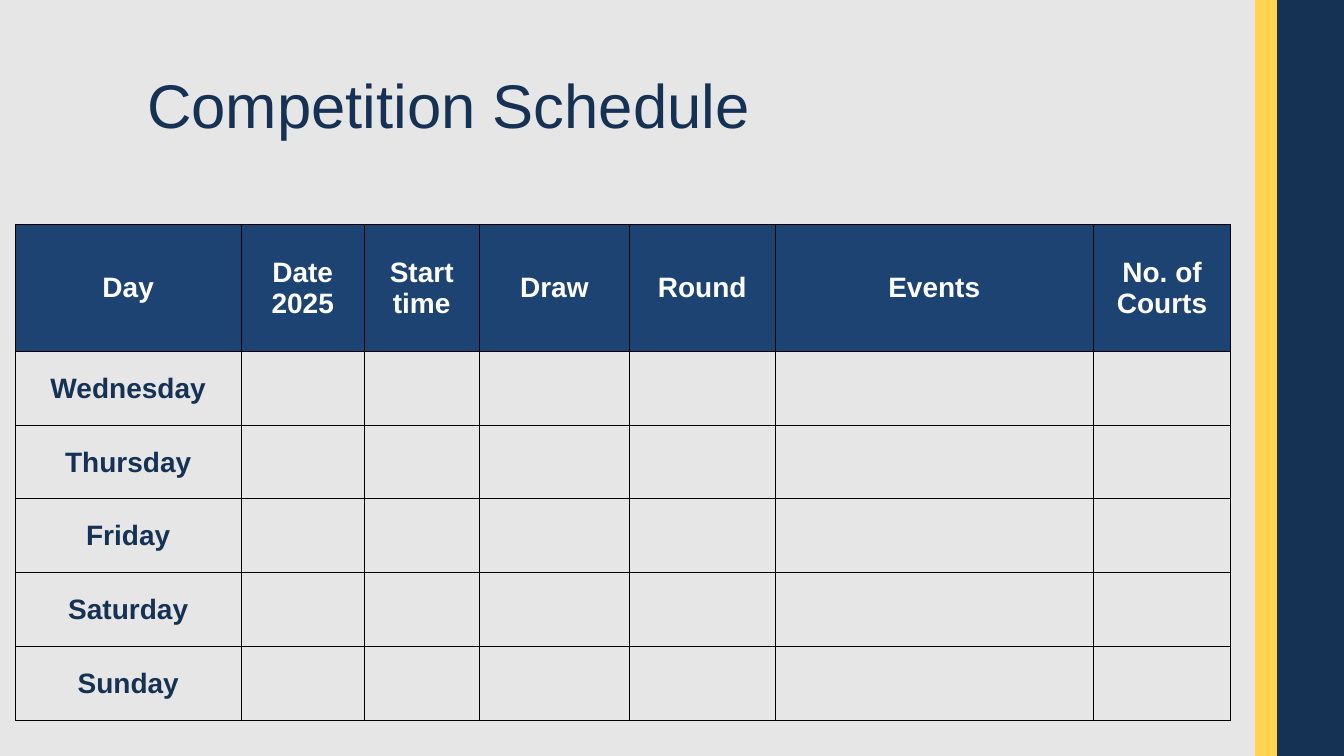
import pptx
import pptx.dml.color
import pptx.enum.shapes
import pptx.enum.text
import pptx.oxml
import pptx.oxml.ns
import pptx.util

HUES = {"back": "E7E6E6", "gold": "FFD24F", "navy": "153255",
        "head": "1C4372", "white": "FFFFFF", "line": "000000"}
ALIGN = pptx.enum.text.PP_ALIGN
HEADS = ["Day", "Date\n2025", "Start time", "Draw", "Round", "Events",
         "No. of Courts"]
DAYS = ["Wednesday", "Thursday", "Friday", "Saturday", "Sunday"]
COLS = [16.82, 9.15, 8.56, 11.18, 10.83, 23.7, 10.2]
ROWS = [16.8] + [9.76] * len(DAYS)


def hue(name):
    return pptx.dml.color.RGBColor.from_string(HUES[name])


def write(frame, text, size=20, color="navy", bold=False,
          align=ALIGN.CENTER, space=1.0):
    frame.text = text
    for para in frame.paragraphs:
        para.alignment = align
        para.line_spacing = space
        for run in para.runs:
            font = run.font
            font.name, font.bold = "Arial", bold
            font.size = pptx.util.Pt(size)
            font.color.rgb = hue(color)


def edge(cell, points=0.5):
    """Draw a thin line on all four sides of a table cell."""
    props = cell._tc.get_or_add_tcPr()
    for side in "LRTB":
        props.append(pptx.oxml.parse_xml(
            f'<a:ln{side} {pptx.oxml.ns.nsdecls("a")} '
            f'w="{pptx.util.Pt(points)}"><a:solidFill>'
            f'<a:srgbClr val="{HUES["line"]}"/></a:solidFill></a:ln{side}>'))


class Page:
    """One slide, measured on a grid of 100 columns by 100 rows."""

    def __init__(self, deck):
        self.wide, self.high = deck.slide_width, deck.slide_height
        self.slide = deck.slides.add_slide(deck.slide_layouts[5])
        fill = self.slide.background.fill
        fill.solid()
        fill.fore_color.rgb = hue("back")

    def x(self, cols):
        return round(self.wide * cols / 100)

    def y(self, rows):
        return round(self.high * rows / 100)

    def band(self, left, color, end=108.9):
        """Fill the full height from a column to a bleed past the edge."""
        shape = self.slide.shapes.add_shape(
            pptx.enum.shapes.MSO_SHAPE.RECTANGLE,
            self.x(left), 0, self.x(end - left), self.high)
        shape.shadow.inherit = False
        shape.fill.solid()
        shape.fill.fore_color.rgb = hue(color)
        shape.line.fill.background()

    def title(self, text, left, top, wide, high):
        shape = self.slide.shapes.title
        shape.left, shape.top = self.x(left), self.y(top)
        shape.width, shape.height = self.x(wide), self.y(high)
        frame = shape.text_frame
        frame.auto_size = pptx.enum.text.MSO_AUTO_SIZE.NONE
        frame.vertical_anchor = pptx.enum.text.MSO_ANCHOR.MIDDLE
        write(frame, text, size=44, align=ALIGN.LEFT, space=0.9)

    def table(self, left, top, cols, rows, data):
        table = self.slide.shapes.add_table(
            len(rows), len(cols), self.x(left), self.y(top),
            self.x(sum(cols)), self.y(sum(rows))).table
        table.first_row = table.horz_banding = False
        for col, wide in zip(table.columns, cols):
            col.width = self.x(wide)
        for row, high in zip(table.rows, rows):
            row.height = self.y(high)
        for r, line in enumerate(data):
            for c, text in enumerate(line):
                self.cell(table.cell(r, c), text, head=r == 0)

    def cell(self, cell, text, head):
        edge(cell)
        cell.vertical_anchor = pptx.enum.text.MSO_ANCHOR.MIDDLE
        cell.margin_left = cell.margin_right = pptx.util.Inches(0.01)
        cell.margin_top, cell.margin_bottom = pptx.util.Inches(0.01), 0
        if head:
            cell.fill.solid()
            cell.fill.fore_color.rgb = hue("head")
        else:
            cell.fill.background()
        if text:
            write(cell.text_frame, text, bold=True,
                  color="white" if head else "navy")


def main():
    deck = pptx.Presentation()
    deck.slide_width = pptx.util.Inches(13.33)
    deck.slide_height = pptx.util.Inches(7.5)
    page = Page(deck)
    page.band(93.38, "gold")
    page.band(95.03, "navy")
    page.title("Competition Schedule", 10.2, 4.67, 73.05, 19.33)
    blank = [""] * (len(HEADS) - 1)
    page.table(1.13, 29.66, COLS, ROWS,
               [HEADS] + [[day] + blank for day in DAYS])
    deck.save("out.pptx")


if __name__ == "__main__":
    main()
